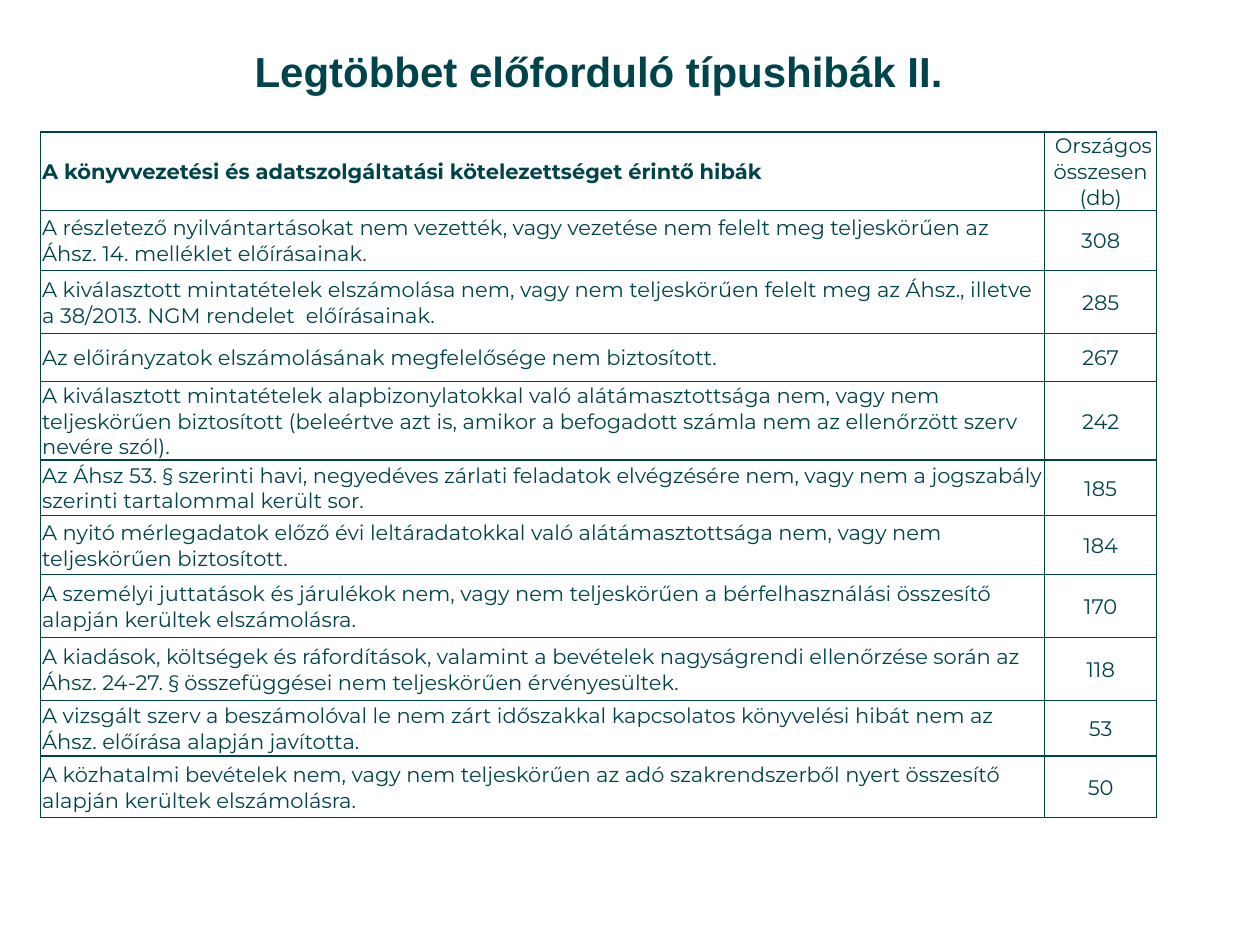
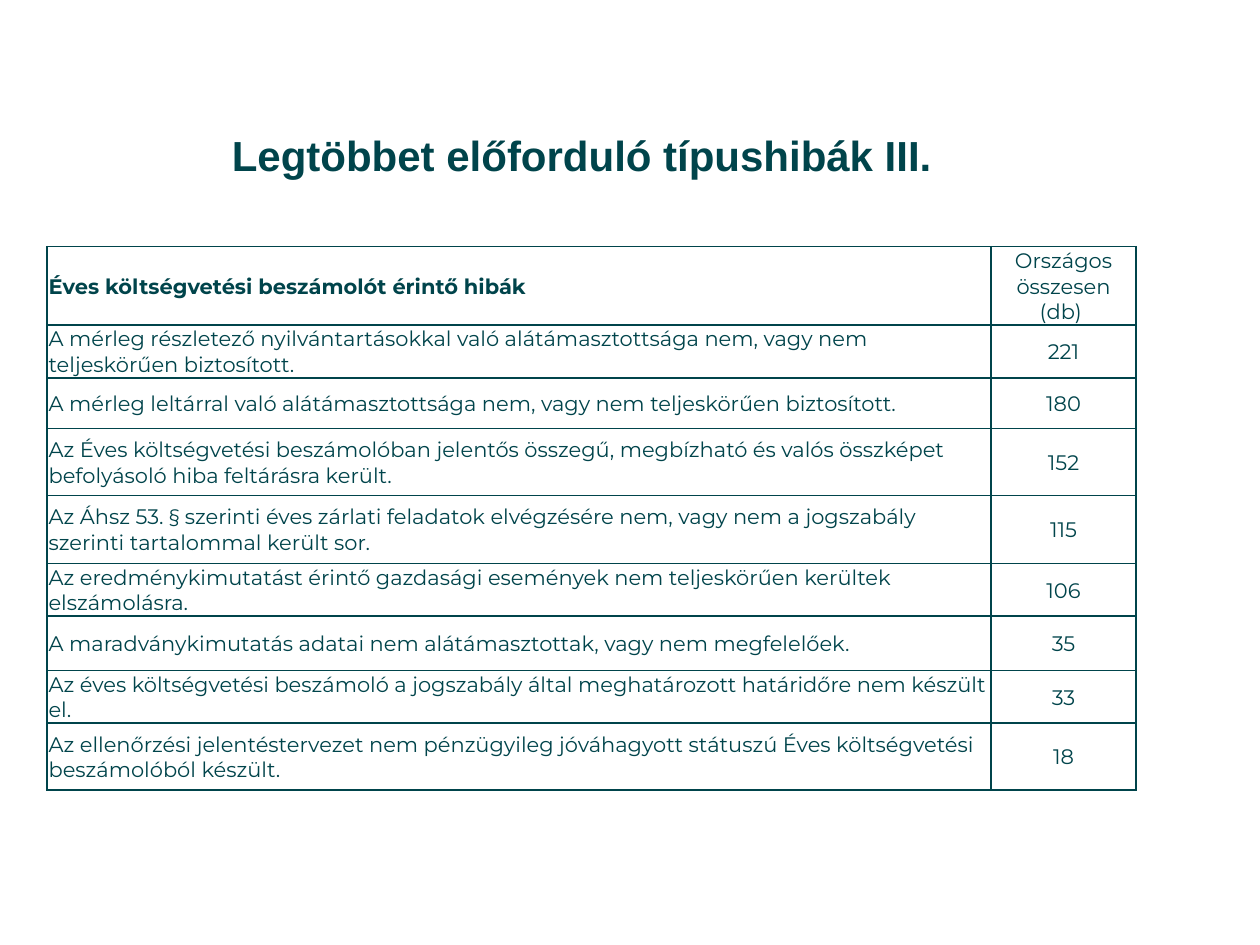
from lxml import etree
from pptx import Presentation
from pptx import util as u
from pptx.dml.color import RGBColor
from pptx.enum import text
from pptx.oxml.ns import qn

COLORS = {"ink": "00444B"}
TITLE_FONT, BODY_FONT = "Arial", "Montserrat"
TITLE_HEIGHT = 1.68
CELL_INSET = 0.03
HARD_SPACE = chr(160)
COUNT_HEADING = "Országos összesen (db)"

BOOKKEEPING_ERRORS = [
    ("A könyvvezetési és adatszolgáltatási kötelezettséget érintő hibák", HARD_SPACE + COUNT_HEADING),
    ("A részletező nyilvántartásokat nem vezették, vagy vezetése nem felelt meg teljeskörűen az "
     "Áhsz. 14. melléklet előírásainak.", "308"),
    ("A kiválasztott mintatételek elszámolása nem, vagy nem teljeskörűen felelt meg az Áhsz., illetve "
     "a 38/2013. NGM rendelet  előírásainak.", "285"),
    ("Az előirányzatok elszámolásának megfelelősége nem biztosított.", "267"),
    ("A kiválasztott mintatételek alapbizonylatokkal való alátámasztottsága nem, vagy nem "
     "teljeskörűen biztosított (beleértve azt is, amikor a befogadott számla nem az ellenőrzött szerv "
     "nevére szól).", "242"),
    ("Az Áhsz 53. § szerinti havi, negyedéves zárlati feladatok elvégzésére nem, vagy nem a jogszabály "
     "szerinti tartalommal került sor.", "185"),
    ("A nyitó mérlegadatok előző évi leltáradatokkal való alátámasztottsága nem, vagy nem "
     "teljeskörűen biztosított.", "184"),
    ("A személyi juttatások és járulékok nem, vagy nem teljeskörűen a bérfelhasználási összesítő "
     "alapján kerültek elszámolásra.", "170"),
    ("A kiadások, költségek és ráfordítások, valamint a bevételek nagyságrendi ellenőrzése során az "
     "Áhsz. 24-27. § összefüggései nem teljeskörűen érvényesültek.", "118"),
    ("A vizsgált szerv a beszámolóval le nem zárt időszakkal kapcsolatos könyvelési hibát nem az "
     "Áhsz. előírása alapján javította.", "53"),
    ("A közhatalmi bevételek nem, vagy nem teljeskörűen az adó szakrendszerből nyert összesítő "
     "alapján kerültek elszámolásra.", "50"),
]

REPORT_ERRORS = [
    ("Éves költségvetési beszámolót érintő hibák", COUNT_HEADING + HARD_SPACE),
    ("A mérleg részletező nyilvántartásokkal való alátámasztottsága nem, vagy nem "
     "teljeskörűen biztosított.", "221"),
    ("A mérleg leltárral való alátámasztottsága nem, vagy nem teljeskörűen biztosított.", "180"),
    ("Az Éves költségvetési beszámolóban jelentős összegű, megbízható és valós összképet "
     "befolyásoló hiba feltárásra került.", "152"),
    ("Az Áhsz 53. § szerinti éves zárlati feladatok elvégzésére nem, vagy nem a jogszabály "
     "szerinti tartalommal került sor.", "115"),
    ("Az eredménykimutatást érintő gazdasági események nem teljeskörűen kerültek "
     "elszámolásra.", "106"),
    ("A maradványkimutatás adatai nem alátámasztottak, vagy nem megfelelőek.", "35"),
    ("Az éves költségvetési beszámoló a jogszabály által meghatározott határidőre nem készült "
     "el.", "33"),
    ("Az ellenőrzési jelentéstervezet nem pénzügyileg jóváhagyott státuszú Éves költségvetési "
     "beszámolóból készült.", "18"),
]


def style_paragraph(paragraph, font_name, size, bold, align):
    paragraph.alignment = align
    font = paragraph.font
    font.name, font.size, font.bold = font_name, u.Pt(size), bold
    font.color.rgb = RGBColor.from_string(COLORS["ink"])


def add_title(slide, wording, left, top, width, bottom_inset=0):
    title = slide.shapes.title
    title.left, title.top = u.Cm(left), u.Cm(top)
    title.width, title.height = u.Cm(width), u.Cm(TITLE_HEIGHT)
    frame = title.text_frame
    frame.text = wording
    frame.word_wrap = True
    frame.auto_size = text.MSO_AUTO_SIZE.NONE
    frame.vertical_anchor = text.MSO_ANCHOR.BOTTOM
    frame.margin_left = frame.margin_right = frame.margin_top = 0
    frame.margin_bottom = u.Cm(bottom_inset)
    heading = frame.paragraphs[0]
    heading.line_spacing = 0.9
    style_paragraph(heading, TITLE_FONT, 24, True, text.PP_ALIGN.CENTER)


def add_borders(cell):
    """Draw a 1 pt line on all four sides; lines must precede the fill."""
    properties = cell._tc.get_or_add_tcPr()
    for position, side in enumerate(("a:lnL", "a:lnR", "a:lnT", "a:lnB")):
        line = etree.Element(qn(side), w=str(u.Pt(1)))
        fill = etree.SubElement(line, qn("a:solidFill"))
        etree.SubElement(fill, qn("a:srgbClr"), val=COLORS["ink"])
        properties.insert(position, line)


def fill_cell(cell, wording, bold, align):
    cell.text = wording
    cell.vertical_anchor = text.MSO_ANCHOR.MIDDLE
    cell.margin_left = cell.margin_right = cell.margin_top = u.Cm(CELL_INSET)
    cell.margin_bottom = 0
    cell.fill.background()
    add_borders(cell)
    style_paragraph(cell.text_frame.paragraphs[0], BODY_FONT, 12, bold, align)


def add_error_table(slide, errors, left, top, column_widths, row_heights):
    table = slide.shapes.add_table(
        len(errors), 2, u.Cm(left), u.Cm(top),
        u.Cm(sum(column_widths)), u.Cm(sum(row_heights))).table
    table.first_row = table.horz_banding = False
    for column, width in zip(table.columns, column_widths):
        column.width = u.Cm(width)
    for index, (error, count) in enumerate(errors):
        table.rows[index].height = u.Cm(row_heights[index])
        fill_cell(table.cell(index, 0), error, index == 0, text.PP_ALIGN.LEFT)
        fill_cell(table.cell(index, 1), count, False, text.PP_ALIGN.CENTER)


def main():
    deck = Presentation()
    deck.slide_width, deck.slide_height = u.Cm(25.4), u.Cm(19.05)
    title_only = deck.slide_layouts[5]

    # Bookkeeping and data reporting errors
    bookkeeping = deck.slides.add_slide(title_only)
    add_title(bookkeeping, "Legtöbbet előforduló típushibák II.", 0.82, 0.99, 22.5, bottom_inset=0.73)
    add_error_table(bookkeeping, BOOKKEEPING_ERRORS, 0.82, 2.66, (20.24, 2.26),
                    (0.97, 1.21, 1.27, 0.97, 1.37, 1.12, 1.19, 1.27, 1.27, 1.12, 1.24))

    # Annual report errors
    report = deck.slides.add_slide(title_only)
    add_title(report, "Legtöbbet előforduló típushibák III.", 1.9, 1.96, 19.66)
    add_error_table(report, REPORT_ERRORS, 0.95, 4.97, (19.03, 2.92),
                    (1.02, 0.97, 1.02, 1.35, 1.37, 0.91, 1.09, 0.94, 1.35))

    deck.save("out.pptx")


if __name__ == "__main__":
    main()
